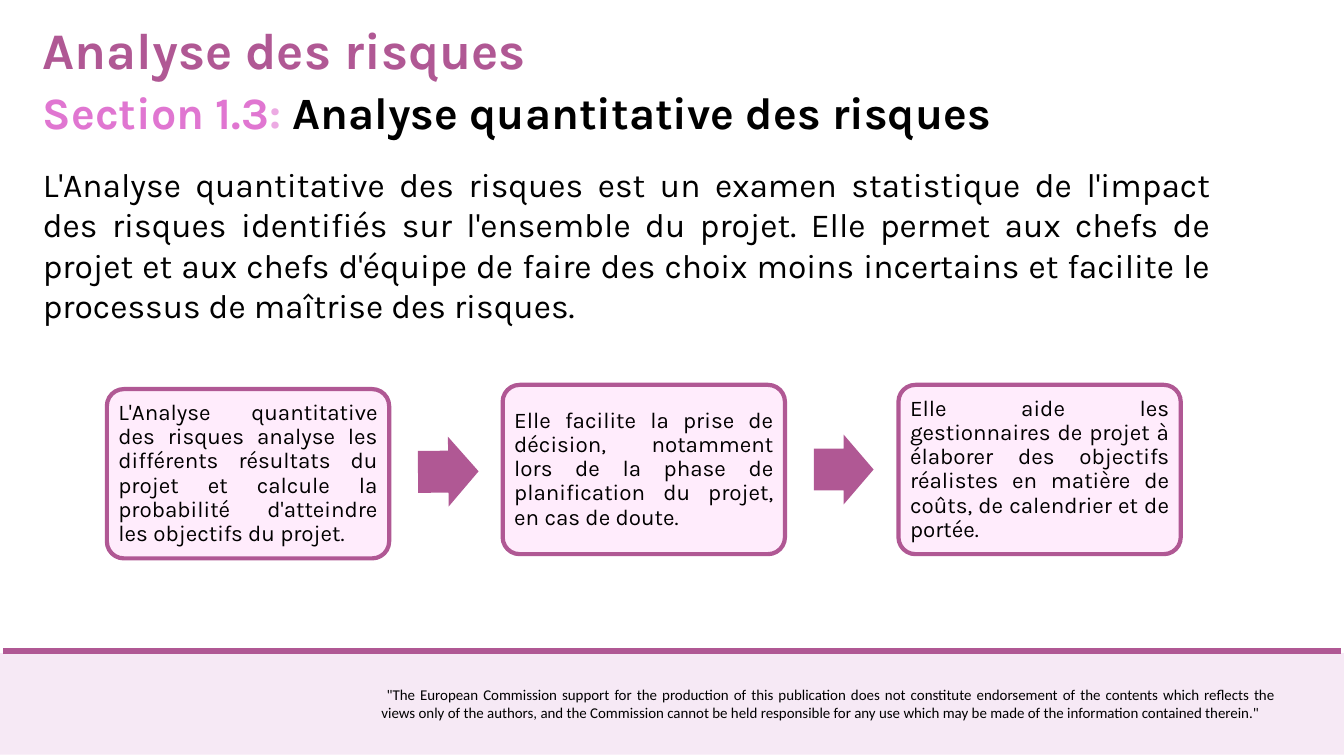
import pptx
import pptx.util
import pptx.dml.color
import pptx.enum.shapes
import pptx.enum.text
import pptx.oxml
import pptx.oxml.ns

Cm, Pt = pptx.util.Cm, pptx.util.Pt
RGB = pptx.dml.color.RGBColor
SHAPE = pptx.enum.shapes.MSO_SHAPE
ALIGN = pptx.enum.text.PP_ALIGN
ANCHOR = pptx.enum.text.MSO_ANCHOR

PLUM = RGB(0xB0, 0x58, 0x94)
PINK = RGB(0xE0, 0x76, 0xD1)
PALE = RGB(0xEC, 0xAA, 0xE3)
CARD = RGB(0xFF, 0xEC, 0xFC)
BAND = RGB(0xF6, 0xE9, 0xF5)
BLACK = RGB(0, 0, 0)

TITLE = [("Analyse des risques", PLUM)]
SECTION = [("Section 1.3", PINK), (": ", PALE),
           ("Analyse quantitative des risques", BLACK)]
INTRO = [("L'Analyse quantitative des risques est un examen statistique de "
          "l'impact des risques identifiés sur l'ensemble du projet. Elle "
          "permet aux chefs de projet et aux chefs d'équipe de faire des "
          "choix moins incertains et facilite le processus de maîtrise des "
          "risques.", BLACK)]
NOTICE = [(" \"The European Commission support for the production of this "
           "publication does not constitute endorsement of the contents "
           "which reflects the views only of the authors, and the "
           "Commission cannot be held responsible for any use which may be "
           "made of the information contained therein.\"", BLACK)]

# Text and top of each card, in cm
CARDS = [
    ("L'Analyse quantitative des risques analyse les différents résultats "
     "du projet et calcule la probabilité d'atteindre les objectifs du "
     "projet.", 14.71),
    ("Elle facilite la prise de décision, notamment lors de la phase de "
     "planification du projet, en cas de doute.", 14.55),
    ("Elle aide les gestionnaires de projet à élaborer des objectifs "
     "réalistes en matière de coûts, de calendrier et de portée.", 14.55),
]
# Top, width and rotation of each arrow
ARROWS = [(16.51, 2.29, -0.6), (16.43, 2.26, 0)]
LEFT, STEP = 4.04, 14.96


def fill_text(frame, parts, size, font="Karla", bold=False, align=ALIGN.LEFT):
    frame.word_wrap = True
    para = frame.paragraphs[0]
    para.alignment = align
    for words, color in parts:
        run = para.add_run()
        run.text = words
        run.font.size = Pt(size)
        run.font.name = font
        run.font.bold = bold
        run.font.color.rgb = color
    return para


def add_text(slide, box, parts, size, **style):
    frame = slide.shapes.add_textbox(*map(Cm, box)).text_frame
    return fill_text(frame, parts, size, **style)


def add_block(slide, kind, box, fill, line=None, width=0):
    shape = slide.shapes.add_shape(kind, *map(Cm, box))
    shape.shadow.inherit = False
    shape.fill.solid()
    shape.fill.fore_color.rgb = fill
    if line is None:
        shape.line.fill.background()
    else:
        shape.line.color.rgb = line
        shape.line.width = Pt(width)
    return shape


def add_footer(slide):
    add_block(slide, SHAPE.RECTANGLE, (0, 24.69, 50.8, 3.84), BAND)
    rule = slide.shapes.add_connector(
        pptx.enum.shapes.MSO_CONNECTOR.STRAIGHT,
        Cm(0.13), Cm(24.61), Cm(50.67), Cm(24.61))
    rule.line.color.rgb = PLUM
    rule.line.width = Pt(6.75)
    rule.element.spPr.append(pptx.oxml.parse_xml(
        "<a:effectLst %s/>" % pptx.oxml.ns.nsdecls("a")))
    add_text(slide, (14.17, 25.78, 34.29, 1.63), NOTICE, 16,
             font="Calibri", align=ALIGN.JUSTIFY)


def add_steps(slide):
    for i, (words, top) in enumerate(CARDS):
        card = add_block(slide, SHAPE.ROUNDED_RECTANGLE,
                         (LEFT + i * STEP, top, 10.67, 6.4), CARD, PLUM, 4.5)
        card.adjustments[0] = 0.1
        frame = card.text_frame
        frame.vertical_anchor = ANCHOR.MIDDLE
        frame.margin_top = frame.margin_bottom = Cm(0.25)
        para = fill_text(frame, [(words, BLACK)], 24, align=ALIGN.JUSTIFY)
        para.line_spacing = 0.9
    for i, (top, width, turn) in enumerate(ARROWS):
        arrow = add_block(slide, SHAPE.RIGHT_ARROW,
                          (LEFT + 11.76 + i * STEP, top, width, 2.64), PLUM)
        arrow.adjustments[0] = 0.6
        arrow.adjustments[1] = 0.5
        arrow.rotation = turn


def main():
    deck = pptx.Presentation()
    deck.slide_width, deck.slide_height = Cm(50.8), Cm(28.58)
    slide = deck.slides.add_slide(deck.slide_layouts[6])
    add_footer(slide)
    add_text(slide, (1.37, 6.07, 44.65, 6.4), INTRO, 36, align=ALIGN.JUSTIFY)
    add_text(slide, (1.37, 0.56, 26.57, 2.62), TITLE, 55, bold=True)
    add_steps(slide)
    add_text(slide, (1.37, 3.07, 37.77, 2.31), SECTION, 48, bold=True)
    deck.save("out.pptx")


if __name__ == "__main__":
    main()
